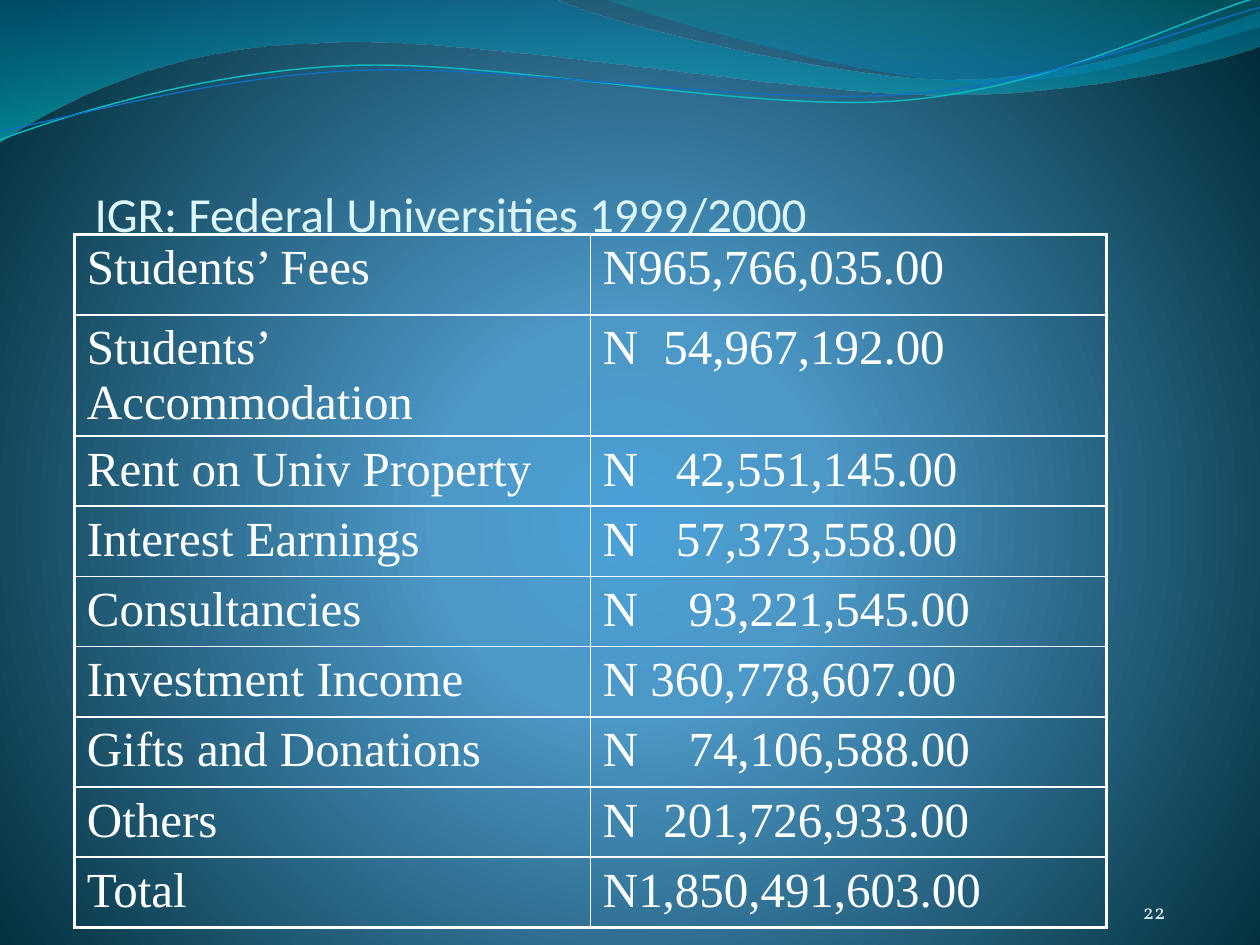
import math
from collections import namedtuple
from pptx import Presentation, util as u
from pptx.dml import color as col
from pptx.enum import text as t
from pptx.oxml import parse_xml, ns

Theme = namedtuple("Theme", "white title number teal blue big small head body digit")
look = Theme("FFFFFF", "DBF5F9", "D1EAEE", "0AB8BF", "0F6FC6", 28, 12,
             "Calibri", "Times New Roman", "Vollkorn")
inch = u.Inches


def write(frame, text, font, size, color, align=t.PP_ALIGN.LEFT, before=0):
    para = frame.paragraphs[0]
    para.alignment = align
    para.space_before = u.Pt(before)
    run = para.add_run()
    run.text = text
    run.font.name = font
    run.font.size = u.Pt(size)
    run.font.color.rgb = col.RGBColor.from_string(color)
    return para


def blend(fill, owner, stops, shade):
    fill.gradient()
    old = next(owner.iter(ns.qn("a:gradFill")))
    marks = "".join(
        f'<a:gs pos="{pos * 1000}"><a:srgbClr val="{rgb}">'
        f'<a:alpha val="{alpha * 1000}"/></a:srgbClr></a:gs>'
        for pos, rgb, alpha in stops)
    new = parse_xml(f'<a:gradFill {ns.nsdecls("a")} rotWithShape="1">'
                    f'<a:gsLst>{marks}</a:gsLst>{shade}</a:gradFill>')
    old.getparent().replace(old, new)


deck = Presentation()
deck.slide_width, deck.slide_height = inch(10), inch(7.5)
slide = deck.slides.add_slide(deck.slide_layouts[5])

back = slide.background
blend(back.fill, slide.element,
      [(0, "4AA0D6", 100), (25, "4C98C7", 100), (100, "002C38", 100)],
      '<a:path path="circle"><a:fillToRect l="10000" t="110000" '
      'r="10000" b="100000"/></a:path>')

waves = [
    ([(0, 0), (4.4, -0.01), (4.76, 0.17, 6.64, 0.63, 7.58, 0.63),
      (8.53, 0.63, 9.58, 0.26, 10, 0.09), (10.01, 0.36),
      (9.83, 0.44, 8.7, 0.76, 7.46, 0.75), (6.22, 0.75, 3.82, 0.28, 2.57, 0.34),
      (1.29, 0.36, 0.46, 0.83, -0.01, 1.13), (0, 0)],
     [(0, "0074A1", 45), (100, "00C6CF", 55)], None, 0, 0, (0, 0)),
    ([(4.79, -0.01), (5.09, 0.11, 6.82, 0.62, 7.69, 0.65),
      (8.56, 0.69, 9.61, 0.32, 10, 0.21), (10, 0), (4.79, -0.01)],
     [(0, "00A1A9", 30), (80, "008BBF", 45)], None, 0, 0, (0, 0)),
    ([(0, 1.11), (0.48, 0.93, 1.58, 0.57, 2.77, 0.52),
      (3.95, 0.47, 5.93, 0.89, 7.13, 0.8), (8.33, 0.71, 9.38, 0.15, 9.98, -0.02)],
     None, look.teal, 0.85, 2.7, (4.99, 0.58)),
    ([(0, 1.04), (0.47, 0.96, 1.64, 0.61, 2.83, 0.56),
      (4.03, 0.51, 5.97, 0.84, 7.17, 0.75), (8.36, 0.67, 9.41, 0.21, 10, 0.06)],
     None, look.blue, 0.75, 2.7, (5, 0.59)),
]
for path, stops, line, width, tilt, (mid, axis) in waves:
    cos, sin = math.cos(math.radians(tilt)), math.sin(math.radians(tilt))
    flat = [n for part in path for n in part]
    dots = [(inch(mid + (x - mid) * cos - (y - axis) * sin),
             inch(axis + (x - mid) * sin + (y - axis) * cos))
            for x, y in zip(flat[::2], flat[1::2])]
    pen = slide.shapes.build_freeform(*dots[0])
    pen.add_line_segments(dots[1:], close=False)
    wave = pen.convert_to_shape()
    wave.shadow.inherit = False
    wave.rotation = -tilt
    trace = next(wave.element.iter(ns.qn("a:path")))
    legs = iter(trace.findall(ns.qn("a:lnTo")))
    for part in path[1:]:
        leg = next(legs)
        if len(part) == 6:
            bend = parse_xml(f'<a:cubicBezTo {ns.nsdecls("a")}/>')
            trace.replace(leg, bend)
            bend.append(leg[0])
            for leg in (next(legs), next(legs)):
                bend.append(leg[0])
                trace.remove(leg)
    if stops:
        trace.append(parse_xml(f'<a:close {ns.nsdecls("a")}/>'))
        blend(wave.fill, wave.element, stops, '<a:lin ang="5400000" scaled="0"/>')
        wave.line.fill.background()
    else:
        wave.fill.background()
        wave.line.color.rgb = col.RGBColor.from_string(line)
        wave.line.width = u.Pt(width)

title = slide.shapes.title
title.element.getparent().append(title.element)
title.left, title.top, title.width, title.height = map(inch, (0.75, 0.67, 8.5, 1.25))
frame = title.text_frame
frame.vertical_anchor = t.MSO_ANCHOR.BOTTOM
frame.margin_left = frame.margin_right = frame.margin_bottom = 0
frame.margin_top = inch(0.05)
write(frame, "IGR: Federal Universities 1999/2000", look.head, look.big, look.title)

rows = [
    ("Students’ Fees", "965,766,035.00", 0),
    ("Students’ Accommodation", "54,967,192.00", 2),
    ("Rent on Univ Property", "42,551,145.00", 3),
    ("Interest Earnings", "57,373,558.00", 3),
    ("Consultancies", "93,221,545.00", 4),
    ("Investment Income", "360,778,607.00", 1),
    ("Gifts and Donations", "74,106,588.00", 4),
    ("Others", "201,726,933.00", 2),
    ("Total", "1,850,491,603.00", 0),
]
tall = [0.64, 0.87] + [3.9 / 7] * 7
last = len(rows) - 1
holder = slide.shapes.add_table(len(rows), 2, inch(0.59), inch(1.86),
                                inch(8.19), inch(5.64))
grid = holder.table
grid.first_row = grid.horz_banding = False
for r, (label, amount, gap) in enumerate(rows):
    grid.rows[r].height = inch(tall[r])
    join = "" if gap == 0 else " " if gap == 1 else "\t"
    for c, words in enumerate((label, "N" + join + amount)):
        cell = grid.cell(r, c)
        para = write(cell.text_frame, words, look.body, look.big, look.white,
                     before=0.2 * look.big)
        if c and gap > 1:
            stop = inch(0.28 + 0.1 * gap)
            para._p.get_or_add_pPr().append(parse_xml(
                f'<a:tabLst {ns.nsdecls("a")}>'
                f'<a:tab pos="{stop}" algn="l"/></a:tabLst>'))
        cell.fill.background()
        edge = {"L": c == 0, "R": c == 1, "T": r == 0, "B": r == last}
        box = cell._tc.get_or_add_tcPr()
        for spot, (side, outer) in enumerate(edge.items()):
            box.insert(spot, parse_xml(
                f'<a:ln{side} {ns.nsdecls("a")} w="{u.Pt(2.25 if outer else 1)}">'
                f'<a:solidFill><a:srgbClr val="{look.white}"/></a:solidFill>'
                f'</a:ln{side}>'))
holder.height = inch(5.64)

page = slide.shapes.add_textbox(inch(7.17), inch(6.83), inch(2.08), inch(0.5))
frame = page.text_frame
frame.word_wrap = True
frame.vertical_anchor = t.MSO_ANCHOR.BOTTOM
frame.margin_left = frame.margin_right = frame.margin_top = frame.margin_bottom = 0
write(frame, "22", look.digit, look.small, look.number, t.PP_ALIGN.RIGHT)

deck.save("out.pptx")
